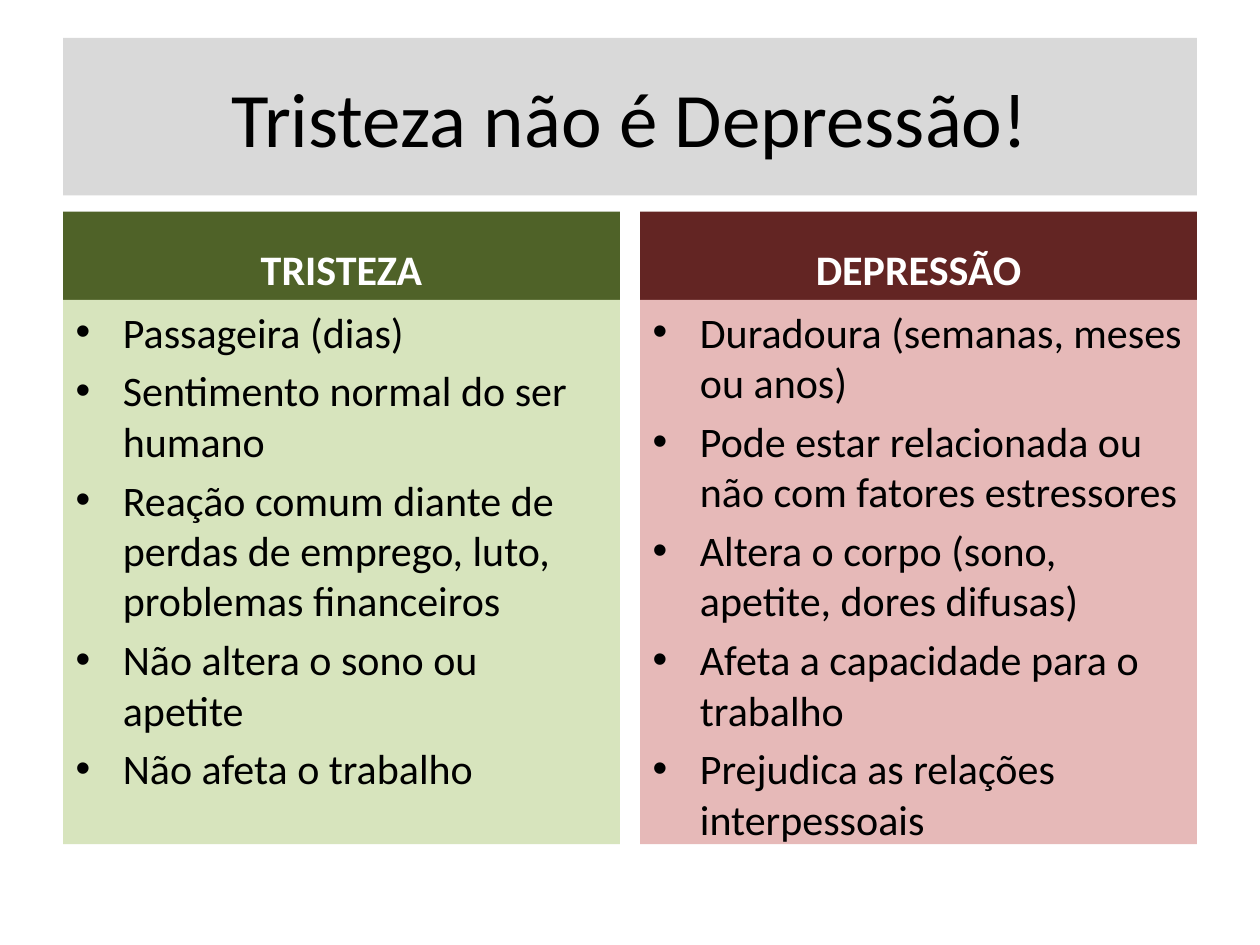
from dataclasses import dataclass

from pptx import Presentation
from pptx import util as u
from pptx.dml.color import RGBColor
from pptx.enum import text


@dataclass(frozen=True)
class Theme:
    font: str = "Calibri"
    title_size: int = 44
    body_size: int = 24
    ink: str = "000000"
    light: str = "FFFFFF"
    banner: str = "D9D9D9"
    green: str = "4F6228"
    pale_green: str = "D7E4BD"
    red: str = "632523"
    pale_red: str = "E6B9B8"


THEME = Theme()
COMPARISON_LAYOUT = 5 - 1
MARGIN, COLUMN_WIDTH, COLUMN_STEP = 0.5, 4.42, 4.58
HEADING_TOP, HEADING_HEIGHT, LIST_HEIGHT = 1.68, 0.7, 4.32

# Heading, heading colour, list colour, list items
COLUMNS = [
    ("TRISTEZA", THEME.green, THEME.pale_green, [
        "Passageira (dias)",
        "Sentimento normal do ser humano",
        "Reação comum diante de perdas de emprego, luto, problemas financeiros",
        "Não altera o sono ou apetite",
        "Não afeta o trabalho",
    ]),
    ("DEPRESSÃO", THEME.red, THEME.pale_red, [
        "Duradoura (semanas, meses ou anos)",
        "Pode estar relacionada ou não com fatores estressores",
        "Altera o corpo (sono, apetite, dores difusas)",
        "Afeta a capacidade para o trabalho",
        "Prejudica as relações interpessoais",
    ]),
]


def set_all(target, values):
    for name, value in values.items():
        setattr(target, name, value)


def place(box, left, top, width, height, fill):
    """Move a placeholder and give it a solid fill."""
    set_all(box, {"left": u.Inches(left), "top": u.Inches(top),
                  "width": u.Inches(width), "height": u.Inches(height)})
    box.fill.solid()
    box.fill.fore_color.rgb = RGBColor.from_string(fill)


def write(box, lines, size, color, anchor, align=None, bold=False):
    """Fill a placeholder with one paragraph per line."""
    frame = box.text_frame
    frame.text = "\n".join(lines)
    set_all(frame, {"word_wrap": True, "vertical_anchor": anchor,
                    "auto_size": text.MSO_AUTO_SIZE.NONE})
    for para in frame.paragraphs:
        para.alignment = align
        for span in para.runs:
            set_all(span.font, {"name": THEME.font, "size": u.Pt(size), "bold": bold})
            span.font.color.rgb = RGBColor.from_string(color)


def add_title(page, title):
    box = page.shapes.title
    place(box, MARGIN, 0.3, 9, 1.25, THEME.banner)
    write(box, [title], THEME.title_size, THEME.ink,
          text.MSO_ANCHOR.MIDDLE, text.PP_ALIGN.CENTER)


def add_column(page, number, heading, heading_fill, list_fill, items):
    left = MARGIN + number * COLUMN_STEP
    heading_box = page.placeholders[1 + 2 * number]
    list_box = page.placeholders[2 + 2 * number]

    place(heading_box, left, HEADING_TOP, COLUMN_WIDTH, HEADING_HEIGHT, heading_fill)
    write(heading_box, [heading], THEME.body_size, THEME.light,
          text.MSO_ANCHOR.BOTTOM, text.PP_ALIGN.CENTER, bold=True)

    # Bullets, indents and spacing come from the layout
    place(list_box, left, HEADING_TOP + HEADING_HEIGHT, COLUMN_WIDTH, LIST_HEIGHT, list_fill)
    write(list_box, items, THEME.body_size, THEME.ink, text.MSO_ANCHOR.TOP)


def main():
    deck = Presentation()
    set_all(deck, {"slide_width": u.Inches(10), "slide_height": u.Inches(7.5)})
    page = deck.slides.add_slide(deck.slide_layouts[COMPARISON_LAYOUT])

    # Title banner
    add_title(page, "Tristeza não é Depressão!")

    # Two columns to compare
    for number, column in enumerate(COLUMNS):
        add_column(page, number, *column)

    deck.save("out.pptx")


if __name__ == "__main__":
    main()
